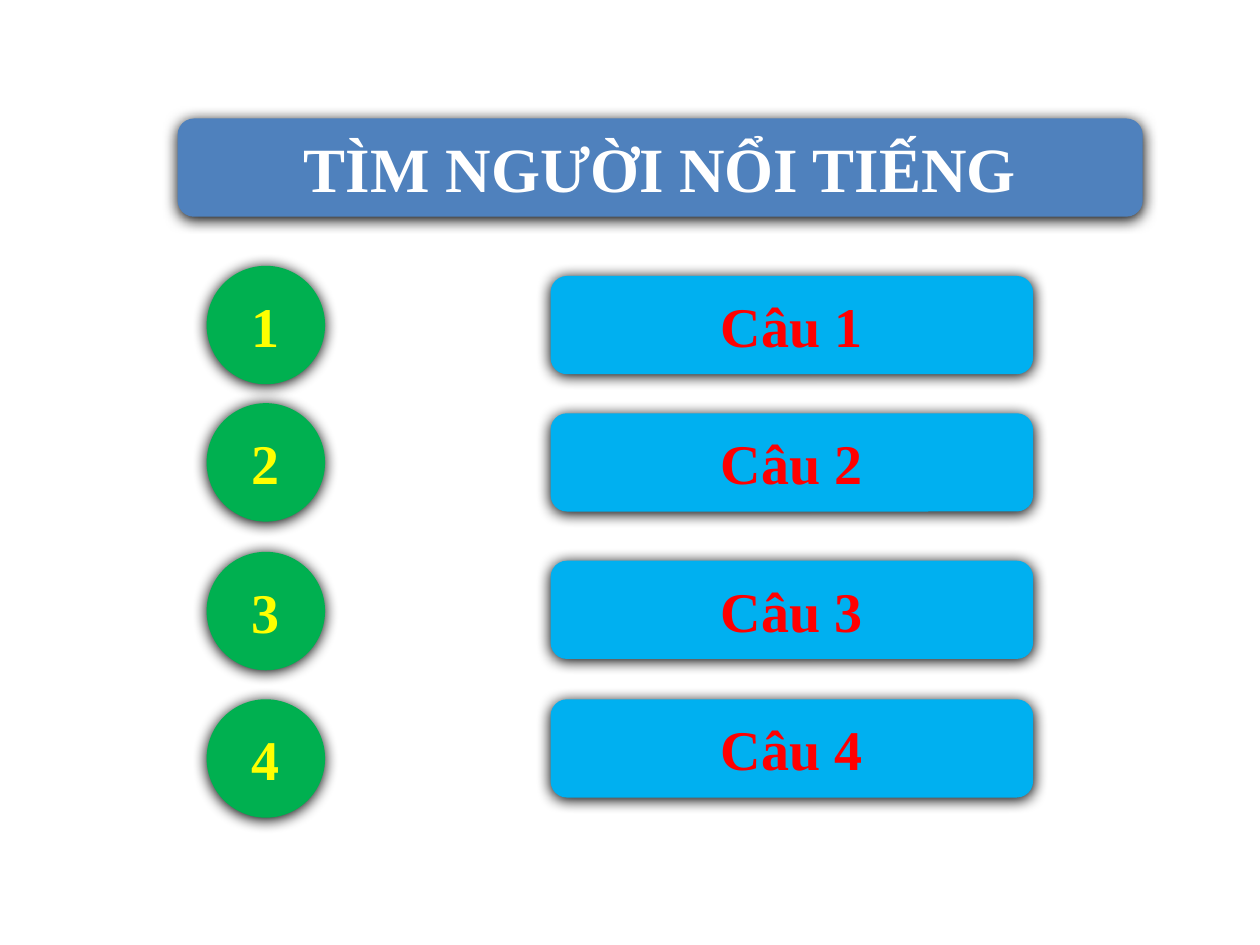
"""Build the "Tìm người nổi tiếng" question menu slide."""
from lxml.etree import SubElement
from pptx import Presentation
from pptx.dml.color import RGBColor
from pptx.enum.shapes import MSO_SHAPE as SHAPE
from pptx.enum.text import MSO_ANCHOR, PP_ALIGN
from pptx.oxml.ns import qn
from pptx.util import Inches, Pt

TITLE = "TÌM NGƯỜI NỔI TIẾNG"
ROWS = [
    ("1", 2.11, "Câu 1", 2.19),
    ("2", 3.2, "Câu 2", 3.28),
    ("3", 4.38, "Câu 3", 4.45),
    ("4", 5.55, "Câu 4", 5.55),
]
FONT = "Times New Roman"
WHITE = RGBColor(0xFF, 0xFF, 0xFF)
BLUE = RGBColor(0x4F, 0x81, 0xBD)
GREEN = RGBColor(0x00, 0xB0, 0x50)
YELLOW = RGBColor(0xFF, 0xFF, 0x00)
SKY = RGBColor(0x00, 0xB0, 0xF0)
RED = RGBColor(0xFF, 0x00, 0x00)
BAR_H, CIRCLE = 0.78, 0.94


def add_shadow(sp):
    sp.shadow.inherit = False
    effects = sp._element.spPr.find(qn("a:effectLst"))
    shadow = SubElement(effects, qn("a:outerShdw"), blurRad=str(Pt(8.5)),
                        dist=str(Pt(1)), dir="5400000", algn="ctr",
                        rotWithShape="0")
    SubElement(shadow, qn("a:srgbClr"), val="000000")


def add_button(s, kind, box, text, fill, color, size=32):
    sp = s.shapes.add_shape(kind, *map(Inches, box))
    sp.fill.solid()
    sp.fill.fore_color.rgb = fill
    sp.line.fill.background()
    add_shadow(sp)
    tf = sp.text_frame
    tf.text = text
    tf.vertical_anchor = MSO_ANCHOR.MIDDLE
    p = tf.paragraphs[0]
    p.alignment = PP_ALIGN.CENTER
    font = p.runs[0].font
    font.name, font.size, font.bold = FONT, Pt(size), True
    font.color.rgb = color


def main():
    prs = Presentation()
    prs.slide_width, prs.slide_height = Inches(10), Inches(7.5)
    s = prs.slides.add_slide(prs.slide_layouts[6])
    add_button(s, SHAPE.ROUNDED_RECTANGLE, (1.41, 0.94, 7.66, BAR_H),
               TITLE, BLUE, WHITE, 36)
    for number, circle_y, question, bar_y in ROWS:
        add_button(s, SHAPE.OVAL, (1.64, circle_y, CIRCLE, CIRCLE),
                   number, GREEN, YELLOW)
        add_button(s, SHAPE.ROUNDED_RECTANGLE, (4.37, bar_y, 3.83, BAR_H),
                   question, SKY, RED)
    prs.save("out.pptx")


if __name__ == "__main__":
    main()
